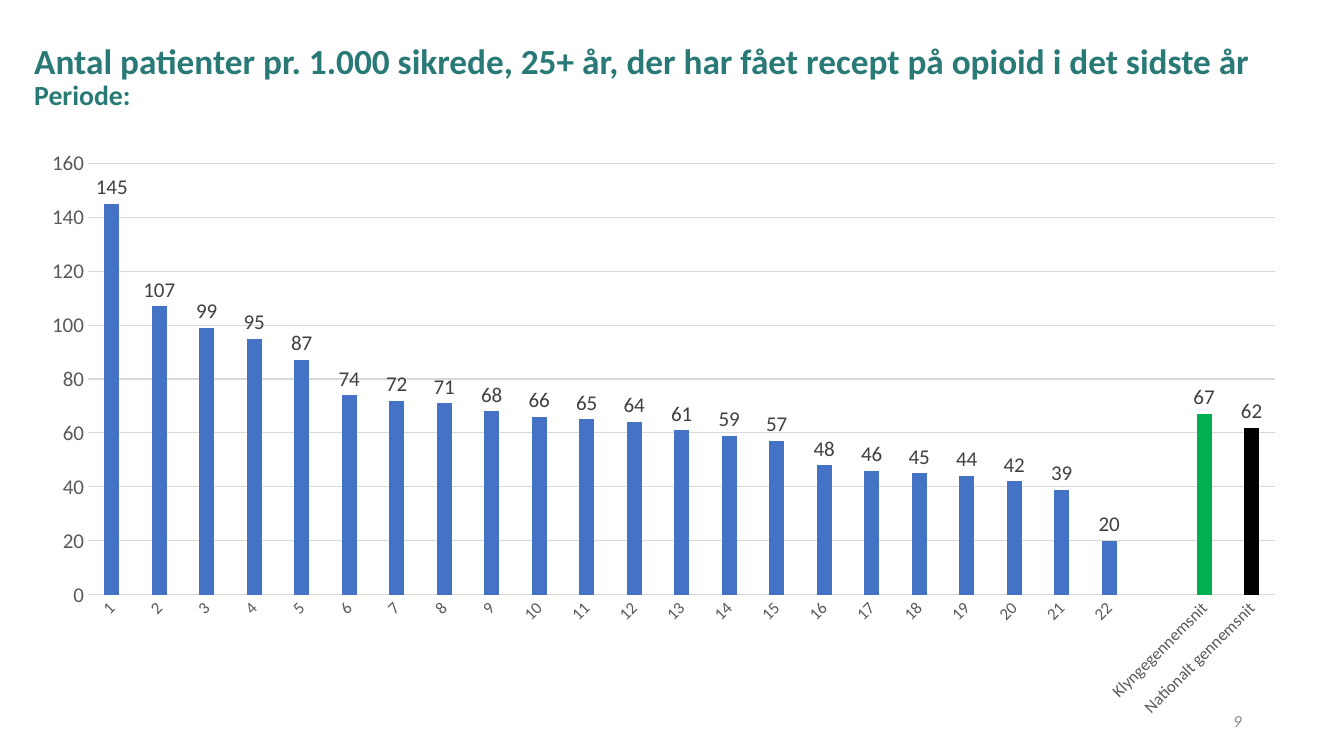
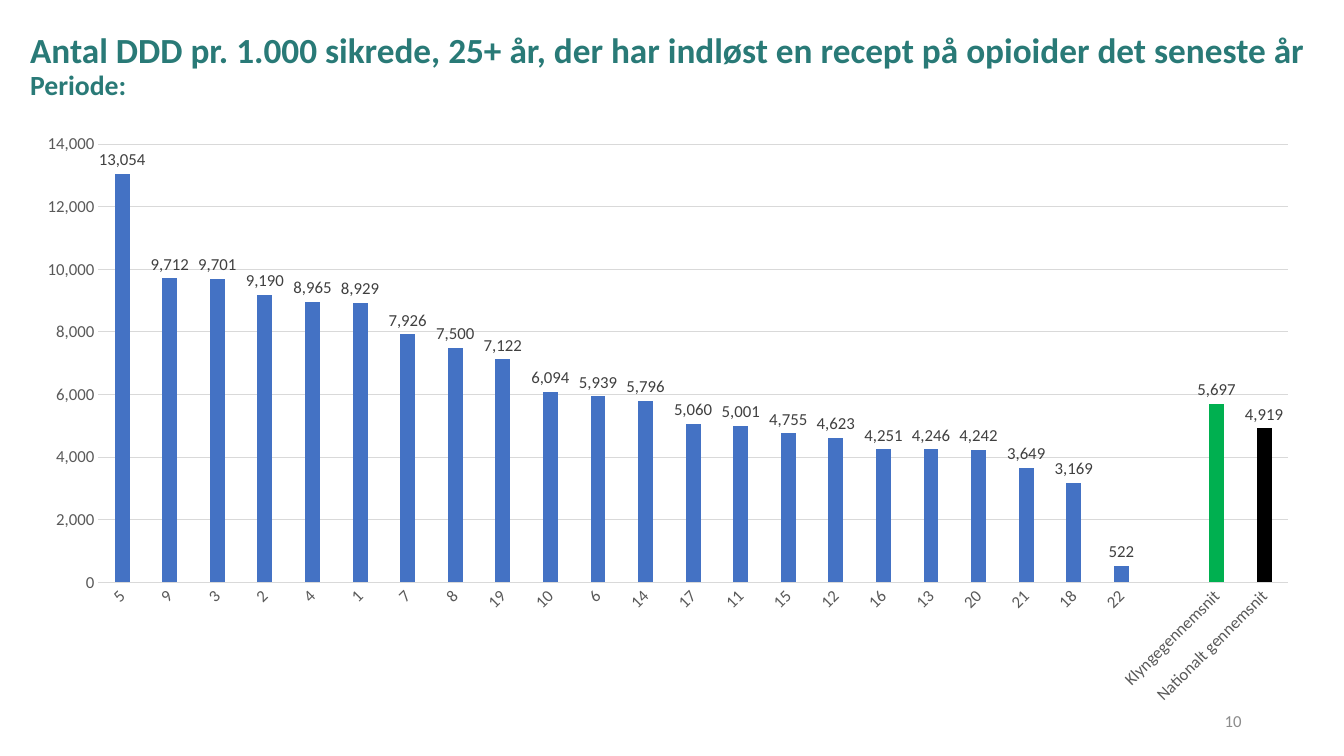
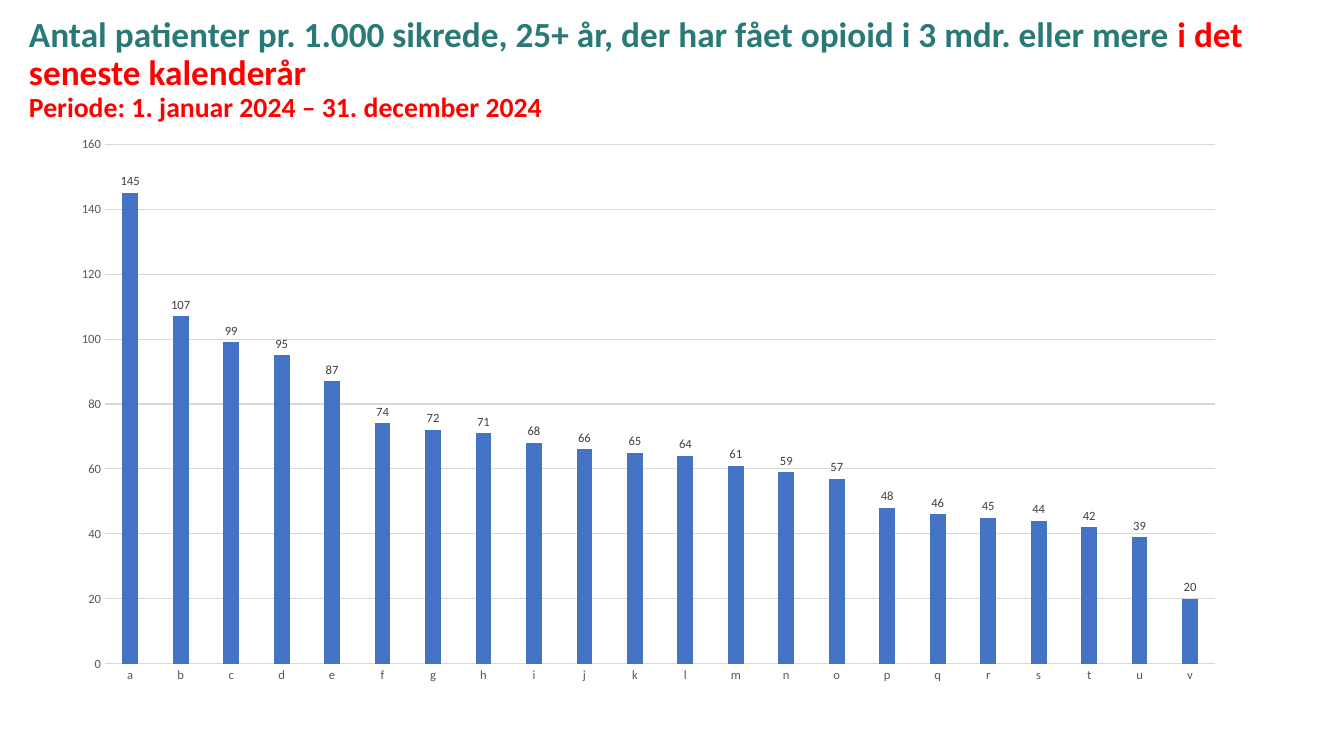
from dataclasses import dataclass

from pptx import Presentation
from pptx import util as u
from pptx.chart.data import CategoryChartData
from pptx.dml.color import RGBColor
from pptx.enum import chart as ch, text
from pptx.oxml import parse_xml
from pptx.oxml.ns import nsdecls


@dataclass(frozen=True)
class Theme:
    font: str = "Calibri"
    heading: str = "297A77"
    alert: str = "FF0000"
    bar: str = "4472C4"
    cluster: str = "00B050"
    national: str = "000000"
    axis_text: str = "595959"
    label_text: str = "404040"
    grid: str = "D9D9D9"
    number: str = "8C8C8C"
    title_size: float = 25.2
    period_size: float = 19.8
    number_size: float = 12


T = Theme()
TITLE_ONLY = 5
AVERAGES = ["", "Klyngegennemsnit", "Nationalt gennemsnit"]
AVERAGE_COLORS = {"Klyngegennemsnit": T.cluster, "Nationalt gennemsnit": T.national}
PATIENTS = [145, 107, 99, 95, 87, 74, 72, 71, 68, 66, 65,
            64, 61, 59, 57, 48, 46, 45, 44, 42, 39, 20]
DDD = {"5": 13054, "9": 9712, "3": 9701, "2": 9190, "4": 8965, "1": 8929,
       "7": 7926, "8": 7500, "19": 7122, "10": 6094, "6": 5939, "14": 5796,
       "17": 5060, "11": 5001, "15": 4755, "12": 4623, "16": 4251, "13": 4246,
       "20": 4242, "21": 3649, "18": 3169, "22": 522}


def px(*lengths):
    """Lengths in px (96 to the inch) as EMU."""
    return [u.Emu(n * 9525) for n in lengths]


def set_font(font, size, color, bold=False, italic=False):
    font.name, font.size = T.font, u.Pt(size)
    font.bold, font.italic = bold, italic
    font.color.rgb = RGBColor.from_string(color)


def add_text(p, content, **fmt):
    r = p.add_run()
    r.text = content
    set_font(r.font, **fmt)


def add_title(slide, box, heading, period, alert="", period_color=T.heading):
    sp = slide.shapes.title
    sp.left, sp.top, sp.width, sp.height = px(*box)
    tf = sp.text_frame
    tf.word_wrap, tf.auto_size = True, text.MSO_AUTO_SIZE.NONE
    tf.vertical_anchor = text.MSO_ANCHOR.MIDDLE
    lines = [[(heading, T.title_size, T.heading), (alert, T.title_size, T.alert)],
             [(period, T.period_size, period_color)]]
    for i, runs in enumerate(lines):
        p = tf.add_paragraph() if i else tf.paragraphs[0]
        p.alignment, p.line_spacing = text.PP_ALIGN.LEFT, 0.9
        p.space_before = p.space_after = u.Pt(0)
        for content, size, color in runs:
            if content:
                add_text(p, content, size=size, color=color, bold=True)


def add_number(slide, number, italic=False):
    tf = slide.shapes.add_textbox(*px(904, 667, 288, 38)).text_frame
    tf.word_wrap, tf.vertical_anchor = True, text.MSO_ANCHOR.MIDDLE
    p = tf.paragraphs[0]
    p.alignment = text.PP_ALIGN.RIGHT
    add_text(p, number, size=T.number_size, color=T.number, italic=italic)


def set_line(line):
    line.color.rgb = RGBColor.from_string(T.grid)
    line.width = u.Pt(0.75)


def set_plot_area(chart, x, y, w, h):
    """Fix the inner plot area, as fractions of the chart."""
    plot_area = chart._chartSpace.chart.plotArea
    for old in plot_area.findall("{*}layout"):
        plot_area.remove(old)
    plot_area.insert(0, parse_xml(
        f'<c:layout {nsdecls("c")}><c:manualLayout><c:layoutTarget val="inner"/>'
        '<c:xMode val="edge"/><c:yMode val="edge"/>'
        f'<c:x val="{x}"/><c:y val="{y}"/><c:w val="{w}"/><c:h val="{h}"/>'
        '</c:manualLayout></c:layout>'))


def add_columns(slide, box, cats, vals, top, step, plot_area,
                cat_size, val_size, num_format="#,##0", slanted=False):
    data = CategoryChartData(number_format=num_format)
    data.categories = cats
    data.add_series("Series 1", vals)
    chart = slide.shapes.add_chart(
        ch.XL_CHART_TYPE.COLUMN_CLUSTERED, *px(*box), data).chart
    chart.has_legend = chart.has_title = False
    set_font(chart.font, 10, "000000")
    set_plot_area(chart, *plot_area)

    # Axes
    cat_axis, val_axis = chart.category_axis, chart.value_axis
    for axis, size in ((cat_axis, cat_size), (val_axis, val_size)):
        axis.major_tick_mark = axis.minor_tick_mark = ch.XL_TICK_MARK.NONE
        set_font(axis.tick_labels.font, size, T.axis_text)
    set_line(cat_axis.format.line)
    if slanted:
        body = cat_axis._element.find("{*}txPr/{*}bodyPr")
        body.set("rot", "-2700000")
        body.set("vert", "horz")
    val_axis.minimum_scale, val_axis.maximum_scale = 0, top
    val_axis.major_unit = step
    val_axis.format.line.fill.background()
    val_axis.has_major_gridlines = True
    set_line(val_axis.major_gridlines.format.line)
    val_axis.tick_labels.number_format = num_format
    val_axis.tick_labels.number_format_is_linked = False

    # Columns, with the averages in their own colours
    plot = chart.plots[0]
    plot.gap_width, plot.overlap, plot.vary_by_categories = 219, -27, False
    series = plot.series[0]
    series.invert_if_negative = False
    fills = [(series, T.bar)] + [(series.points[i], AVERAGE_COLORS[c])
                                 for i, c in enumerate(cats) if c in AVERAGE_COLORS]
    for part, color in fills:
        part.format.fill.solid()
        part.format.fill.fore_color.rgb = RGBColor.from_string(color)

    # Value labels
    labels = series.data_labels
    labels.show_value = True
    labels.position = ch.XL_LABEL_POSITION.OUTSIDE_END
    labels.number_format, labels.number_format_is_linked = num_format, False
    set_font(labels.font, val_size, T.label_text)


def main():
    prs = Presentation()
    prs.slide_width, prs.slide_height = px(1280, 720)
    layout = prs.slide_layouts[TITLE_ONLY]

    # Patients with a prescription
    s = prs.slides.add_slide(layout)
    add_title(s, (23, 24, 1216, 100),
              "Antal patienter pr. 1.000 sikrede, 25+ år, der har fået recept på opioid i det sidste år",
              "Periode:")
    add_number(s, "9", italic=True)
    add_columns(s, (23, 133, 1216, 563),
                [str(n + 1) for n in range(len(PATIENTS))] + AVERAGES,
                PATIENTS + [None, 67, 62], 160, 20, (0.05, 0.04, 0.93, 0.73),
                cat_size=12, val_size=15, num_format="General", slanted=True)

    # Daily doses
    s = prs.slides.add_slide(layout)
    add_title(s, (19, 27, 1245, 74),
              "Antal DDD pr. 1.000 sikrede, 25+ år, der har indløst en recept på opioider det seneste år",
              "Periode:")
    add_number(s, "10")
    add_columns(s, (19, 101, 1245, 605), list(DDD) + AVERAGES,
                list(DDD.values()) + [None, 5697, 4919], 14000, 2000,
                (0.06, 0.06, 0.91, 0.69), cat_size=12, val_size=12, slanted=True)

    # Patients treated for three months or more
    s = prs.slides.add_slide(layout)
    add_title(s, (18, 17, 1244, 100),
              "Antal patienter pr. 1.000 sikrede, 25+ år, der har fået opioid i 3 mdr. eller mere ",
              "Periode: 1. januar 2024 – 31. december 2024",
              alert="i det seneste kalenderår", period_color=T.alert)
    add_columns(s, (55, 121, 1125, 544), list("abcdefghijklmnopqrstuv"), PATIENTS,
                160, 20, (0.04, 0.03, 0.94, 0.91), cat_size=9, val_size=9)

    prs.save("out.pptx")


if __name__ == "__main__":
    main()
